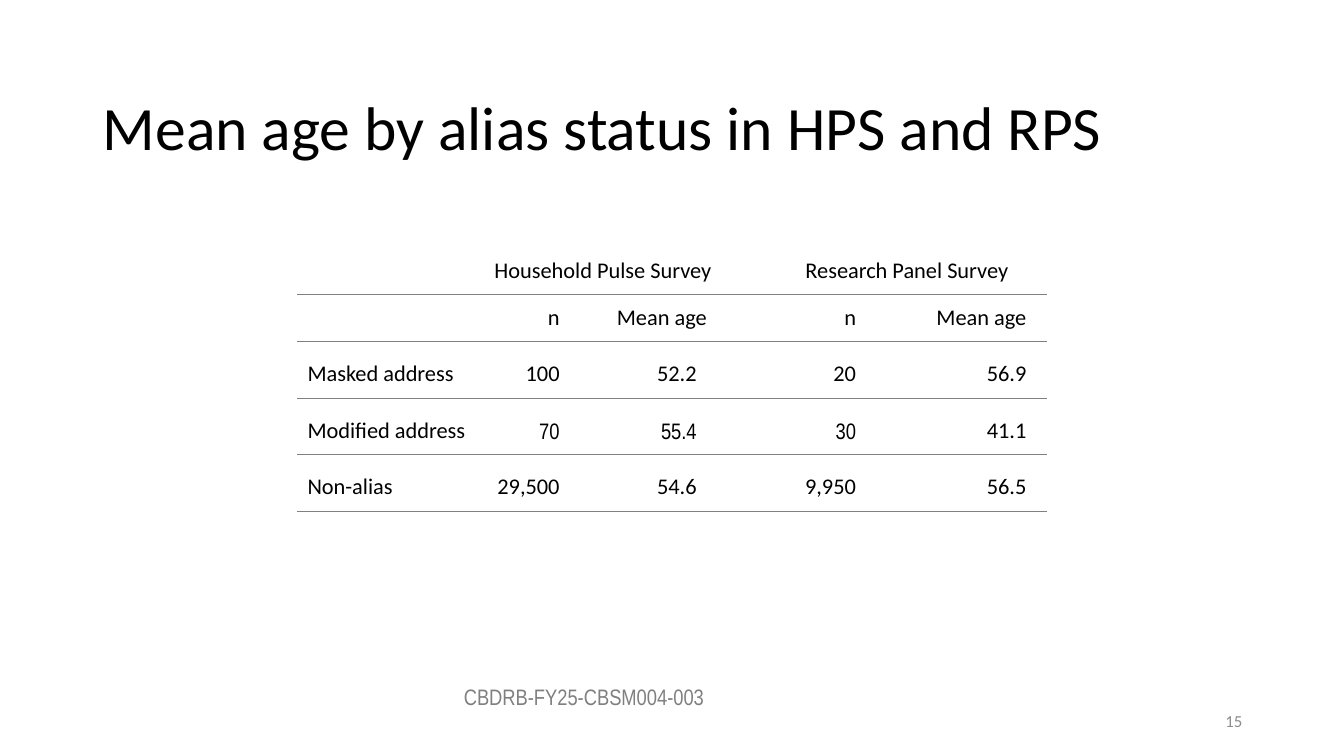
from dataclasses import dataclass

from lxml import etree
from pptx import Presentation
from pptx.dml.color import RGBColor
from pptx.enum.text import MSO_ANCHOR, PP_ALIGN
from pptx.oxml.ns import qn
from pptx.util import Inches, Pt

LEFT, CENTER, RIGHT = PP_ALIGN.LEFT, PP_ALIGN.CENTER, PP_ALIGN.RIGHT
MIDDLE, BOTTOM, TOP = MSO_ANCHOR.MIDDLE, MSO_ANCHOR.BOTTOM, MSO_ANCHOR.TOP


@dataclass(frozen=True)
class Theme:
    ink: str = "000000"
    gray: str = "808080"
    page_gray: str = "8C8C8C"
    font: str = "Calibri"
    narrow: str = "Arial Narrow"
    title_size: int = 44
    body_size: int = 16
    page_size: int = 12
    rule: float = 0.5
    plain_table: str = "{2D5ABB26-0587-4C30-8999-92F81FD0307C}"


THEME = Theme()

COLUMN_WIDTHS = [1.8, 1, 1.36, 0.6, 0.98, 1.69]
ROW_HEIGHTS = [0.47, 0.47, 0.56, 0.56, 0.56]
AGE_ROWS = [
    ["", "Household Pulse Survey", "", "", "Research Panel Survey", ""],
    ["", "n", "Mean age", "", "n", "Mean age"],
    ["Masked address", "100", "52.2", "", "20", "56.9"],
    ["Modified address", "70", "55.4", "", "30", "41.1"],
    ["Non-alias", "29,500", "54.6", "", "9,950", "56.5"],
]
SURVEY_COLUMNS = [1, 4]
NARROW_CELLS = {(3, 1), (3, 2), (3, 4)}
RIGHT_INSETS = {(0, 1): 0, (1, 2): 0.1}  # all other figures use 0.2


def write(frame, text, size, color=THEME.ink, font=THEME.font, align=LEFT):
    frame.text = text
    paragraph = frame.paragraphs[0]
    paragraph.alignment = align
    paragraph.font.size = Pt(size)
    paragraph.font.name = font
    paragraph.font.color.rgb = RGBColor.from_string(color)
    return paragraph


def add_title(slide, left, top, width, height):
    title = slide.shapes.title
    title.left, title.top = Inches(left), Inches(top)
    title.width, title.height = Inches(width), Inches(height)
    title.text_frame.vertical_anchor = MIDDLE
    heading = write(title.text_frame, "Mean age by alias status in HPS and RPS",
                    THEME.title_size)
    heading.line_spacing = 0.9


def add_note(slide, text, left, top, width, height, inset, anchor, **style):
    note = slide.shapes.add_textbox(Inches(left), Inches(top),
                                    Inches(width), Inches(height))
    frame = note.text_frame
    frame.word_wrap = True
    frame.vertical_anchor = anchor
    frame.margin_left = frame.margin_right = Inches(inset)
    frame.margin_top = frame.margin_bottom = Inches(0.05)
    write(frame, text, **style)


def rule_below(cell):
    line = etree.SubElement(cell._tc.get_or_add_tcPr(), qn("a:lnB"),
                            w=str(Pt(THEME.rule)))
    fill = etree.SubElement(line, qn("a:solidFill"))
    etree.SubElement(fill, qn("a:srgbClr"), val=THEME.gray)


def add_age_table(slide, left, top):
    table = slide.shapes.add_table(
        len(ROW_HEIGHTS), len(COLUMN_WIDTHS), Inches(left), Inches(top),
        Inches(sum(COLUMN_WIDTHS)), Inches(sum(ROW_HEIGHTS))).table
    table.first_row = table.horz_banding = False
    table._tbl.tblPr.find(qn("a:tableStyleId")).text = THEME.plain_table
    for column, width in zip(table.columns, COLUMN_WIDTHS):
        column.width = Inches(width)
    for row, height in zip(table.rows, ROW_HEIGHTS):
        row.height = Inches(height)

    # Survey names span their two figures
    for col in SURVEY_COLUMNS:
        table.cell(0, col).merge(table.cell(0, col + 1))

    for r, values in enumerate(AGE_ROWS):
        for c, value in enumerate(values):
            cell = table.cell(r, c)
            rule_below(cell)
            cell.fill.background()
            cell.vertical_anchor = BOTTOM
            cell.margin_left = cell.margin_top = cell.margin_bottom = Inches(0.1)
            cell.margin_right = Inches(RIGHT_INSETS.get((r, c), 0.2 if c else 0.1))
            align = LEFT if c == 0 else CENTER if r == 0 else RIGHT
            font = THEME.narrow if (r, c) in NARROW_CELLS else THEME.font
            write(cell.text_frame, value, THEME.body_size, font=font, align=align)


def main():
    deck = Presentation()
    deck.slide_width, deck.slide_height = Inches(13.33), Inches(7.5)
    slide = deck.slides.add_slide(deck.slide_layouts[5])

    add_title(slide, 0.92, 0.57, 11.5, 1.45)
    # Page number
    add_note(slide, "15", 9.42, 6.95, 3, 0.4, 0.1, MIDDLE,
             size=THEME.page_size, color=THEME.page_gray, align=RIGHT)
    add_age_table(slide, 2.95, 2.45)
    # Release approval number
    add_note(slide, "CBDRB-FY25-CBSM004-003", 4.55, 6.73, 4.02, 0.37, 0.05, TOP,
             size=THEME.body_size, color=THEME.gray, font=THEME.narrow)

    deck.save("out.pptx")


if __name__ == "__main__":
    main()
